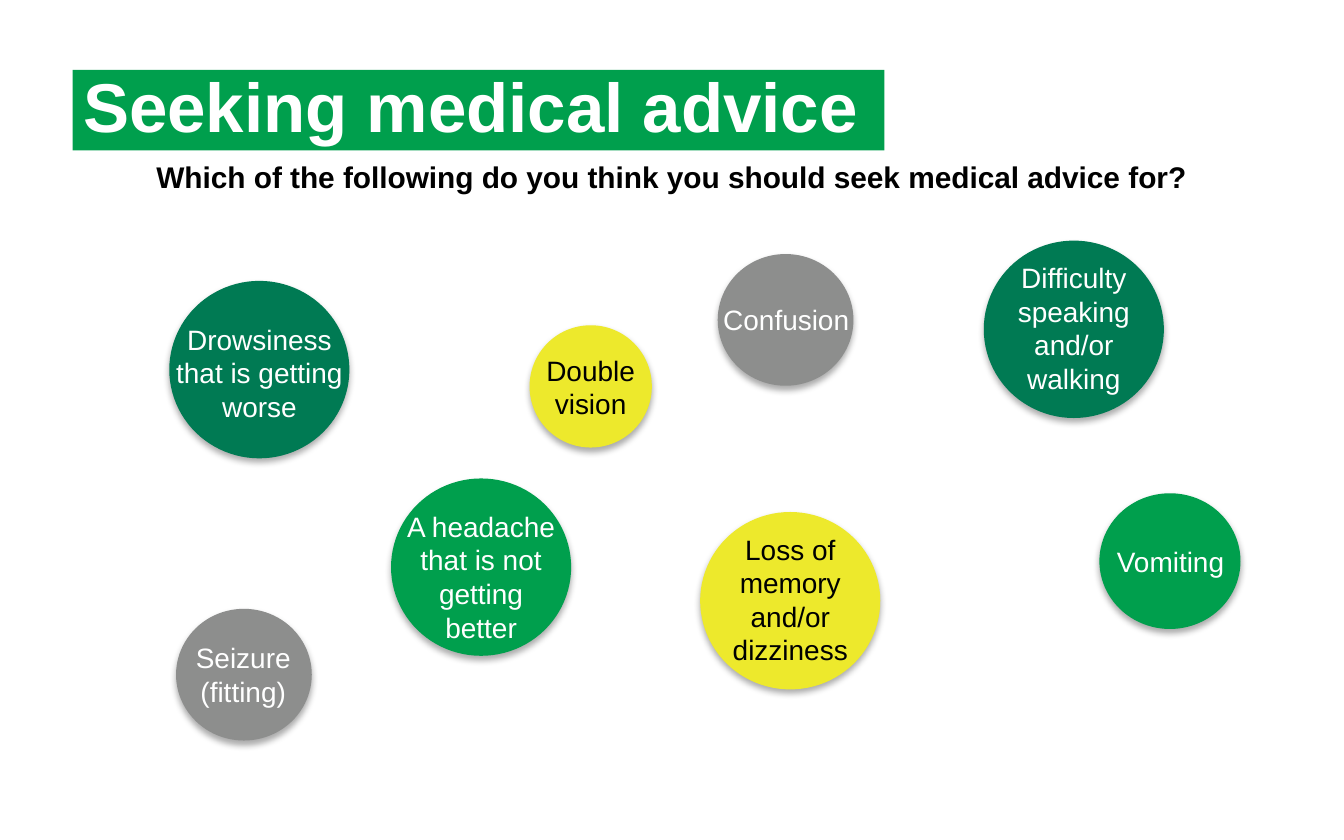
"""Build a slide of symptom bubbles that asks when to seek medical advice."""
from lxml import etree
from pptx import Presentation
from pptx.dml.color import RGBColor
from pptx.enum.shapes import MSO_SHAPE
from pptx.enum.text import MSO_ANCHOR, MSO_AUTO_SIZE, PP_ALIGN
from pptx.util import Pt

OVAL = MSO_SHAPE.OVAL
TOP, MIDDLE = MSO_ANCHOR.TOP, MSO_ANCHOR.MIDDLE
FIXED = MSO_AUTO_SIZE.NONE
LEFT, CENTER = PP_ALIGN.LEFT, PP_ALIGN.CENTER

GREEN = RGBColor(0x00, 0x9F, 0x4D)
DARK = RGBColor(0x00, 0x7A, 0x53)
YELLOW = RGBColor(0xED, 0xE9, 0x2C)
GREY = RGBColor(0x8D, 0x8E, 0x8D)
WHITE = RGBColor(0xFF, 0xFF, 0xFF)
BLACK = RGBColor(0x00, 0x00, 0x00)

PX = 9144
SIZE = (1000, 625)
TITLE = ("Seeking medical advice", (54, 52, 604, 60))
PROMPT = ("Which of the following do you think you should seek medical advice for?",
          (0, 113, 1000, 37))
BUBBLES = [
    ("Loss of memory and/or dizziness", YELLOW, (521, 381, 134, 132), (514, 391, 148, 111)),
    ("Drowsiness that is getting worse", DARK, (126, 209, 134, 132), (119, 235, 148, 86)),
    ("A headache that is not getting better", GREEN, (291, 356, 134, 132), (291, 374, 134, 111)),
    ("Confusion", GREY, (534, 189, 101, 98), (511, 220, 148, 35)),
    ("Difficulty speaking and/or walking", DARK, (732, 179, 134, 132), (725, 189, 148, 111)),
    ("Vomiting", GREEN, (818, 367, 105, 101), (804, 400, 134, 35)),
    ("Seizure (fitting)", GREY, (131, 453, 101, 98), (107, 472, 148, 61)),
    ("Double vision", YELLOW, (394, 242, 91, 91), (386, 258, 107, 61)),
]

SHADOW = """<a:effectLst xmlns:a="http://schemas.openxmlformats.org/drawingml/2006/main">
<a:outerShdw blurRad="44450" dist="27940" dir="5400000" algn="ctr" rotWithShape="0">
<a:srgbClr val="000000"><a:alpha val="32000"/></a:srgbClr></a:outerShdw></a:effectLst>"""


def apply(item, values):
    for name, value in values.items():
        setattr(item, name, value)


def scale(box):
    return [n * PX for n in box]


def write(shape, text, size, color, bold=False, align=CENTER, anchor=TOP):
    frame = shape.text_frame
    frame.text = text
    apply(frame, {"word_wrap": True, "auto_size": FIXED, "vertical_anchor": anchor})
    para = frame.paragraphs[0]
    para.alignment = align
    apply(para.font, {"name": "Arial", "size": Pt(size), "bold": bold})
    para.font.color.rgb = color
    return frame


def fill(shape, color):
    shape.fill.solid()
    shape.fill.fore_color.rgb = color


def add_title(slide):
    text, box = TITLE
    title = slide.shapes.title
    apply(title, dict(zip(("left", "top", "width", "height"), scale(box))))
    fill(title, GREEN)
    frame = write(title, text, 37, WHITE, True, LEFT, MIDDLE)
    apply(frame, {"margin_left": 8 * PX, "margin_right": 8 * PX,
                  "margin_top": 4 * PX, "margin_bottom": 4 * PX})
    frame.paragraphs[0].line_spacing = 0.9


def add_bubble(slide, text, color, disc, label):
    group = slide.shapes.add_group_shape()
    oval = group.shapes.add_shape(OVAL, *scale(disc))
    fill(oval, color)
    oval.line.fill.background()
    oval.shadow.inherit = True
    oval._element.spPr.append(etree.fromstring(SHADOW))
    ink = BLACK if color == YELLOW else WHITE
    write(group.shapes.add_textbox(*scale(label)), text, 15, ink)


def main():
    deck = Presentation()
    deck.slide_width, deck.slide_height = scale(SIZE)
    slide = deck.slides.add_slide(deck.slide_layouts[5])
    add_title(slide)
    text, box = PROMPT
    write(slide.shapes.add_textbox(*scale(box)), text, 16, BLACK, True)
    for bubble in BUBBLES:
        add_bubble(slide, *bubble)
    deck.save("out.pptx")


if __name__ == "__main__":
    main()
